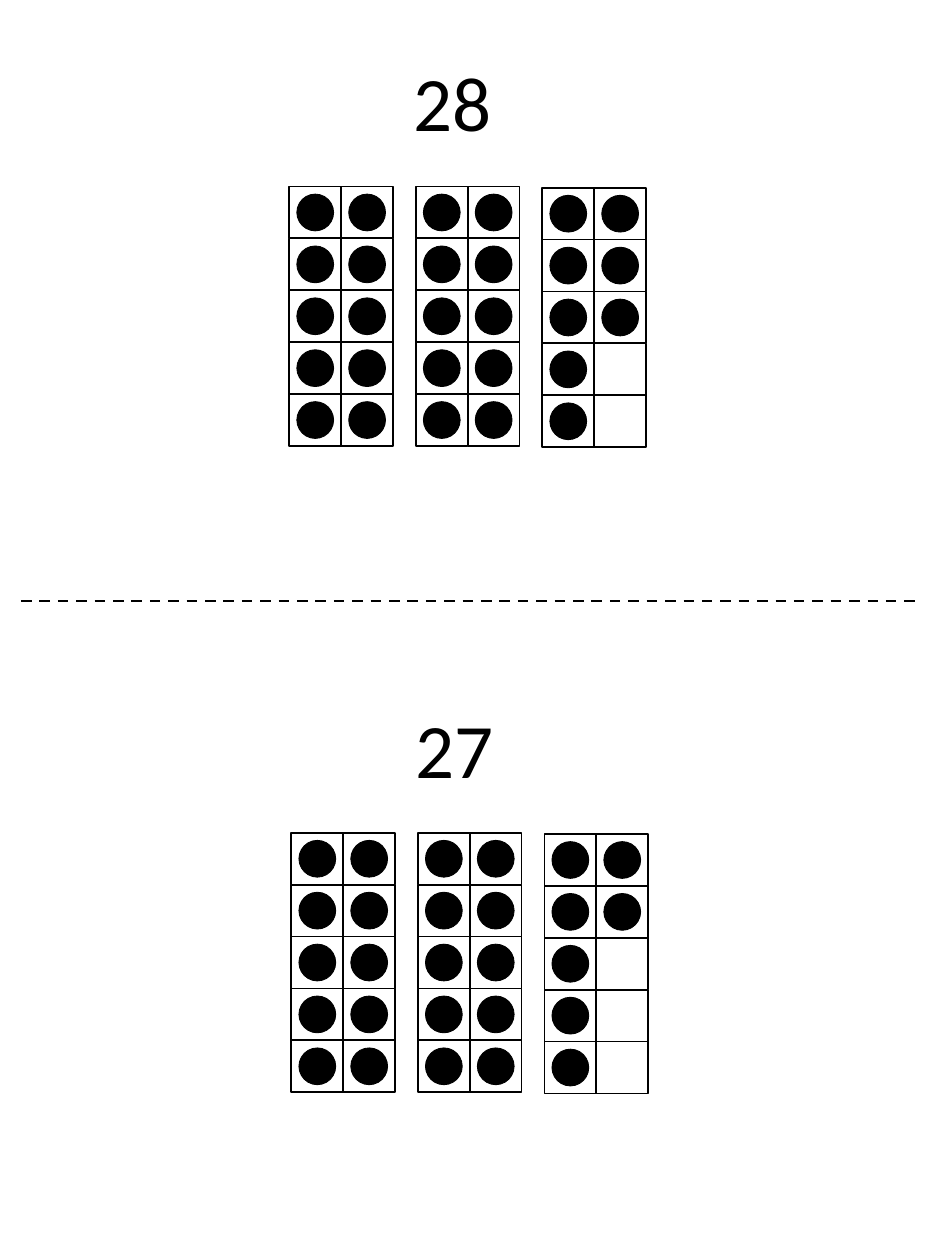
from lxml import etree
from pptx import Presentation
from pptx.dml.color import RGBColor
from pptx.enum.dml import MSO_LINE
from pptx.enum.shapes import MSO_CONNECTOR, MSO_SHAPE
from pptx.enum.text import MSO_ANCHOR, MSO_AUTO_SIZE, PP_ALIGN
from pptx.oxml.ns import qn
from pptx.util import Pt

# Content: each card shows a number and the ten frames that count it
CARDS = [
    {"number": 28, "number_at": (199.4, 21.6), "frames_at": (165.3, 106.6)},
    {"number": 27, "number_at": (200.2, 391), "frames_at": (166.5, 475.9)},
]
BLACK, WHITE = "000000", "FFFFFF"
ROWS, COLUMNS = 5, 2
FRAME_SIZE = ROWS * COLUMNS
CELL, DOT = 29.65, 21
FRAME_PITCH = 72.3
PARTIAL_DROP = 0.7  # the unfilled frame sits slightly lower
NUMBER_SIZE = (118.8, 72)


def color(hex_code):
    return RGBColor.from_string(hex_code)


def add_mark(kind, left, top, size, fill, line_width):
    mark = slide.shapes.add_shape(kind, Pt(left), Pt(top), Pt(size), Pt(size))
    mark.shadow.inherit = False
    mark.fill.solid()
    mark.fill.fore_color.rgb = color(fill)
    mark.line.color.rgb = color(BLACK)
    mark.line.width = Pt(line_width)


def write_number(box, number, position):
    box.left, box.top = map(Pt, position)
    box.width, box.height = map(Pt, NUMBER_SIZE)
    frame = box.text_frame
    frame.word_wrap = True
    frame.auto_size = MSO_AUTO_SIZE.NONE
    frame.vertical_anchor = MSO_ANCHOR.MIDDLE
    paragraph = frame.paragraphs[0]
    paragraph.alignment = PP_ALIGN.CENTER
    run = paragraph.add_run()
    run.text = str(number)
    run.font.name = "Calibri"
    run.font.size = Pt(44)
    run.font.color.rgb = color(BLACK)


def add_ten_frame(left, top, count):
    for row in range(ROWS):
        for column in range(COLUMNS):
            x, y = left + column * CELL, top + row * CELL
            add_mark(MSO_SHAPE.RECTANGLE, x, y, CELL, WHITE, 1)
            # Dots fill the left column first, then the right
            if column * ROWS + row < count:
                inset = (CELL - DOT) / 2
                add_mark(MSO_SHAPE.OVAL, x + inset, y + inset, DOT, BLACK, 0.5)


deck = Presentation()
deck.slide_width, deck.slide_height = Pt(540), Pt(720)
slide = deck.slides.add_slide(deck.slide_layouts[5])

# Cut line between the cards
cut_line = slide.shapes.add_connector(
    MSO_CONNECTOR.STRAIGHT, Pt(12), Pt(343.4), Pt(525), Pt(343.4))
cut_line.line.color.rgb = color(BLACK)
cut_line.line.width = Pt(1.5)
cut_line.line.dash_style = MSO_LINE.DASH
etree.SubElement(cut_line._element.spPr, qn("a:effectLst"))

# Cards: the first number is the slide title
for index, card in enumerate(CARDS):
    number_box = (slide.shapes.title if index == 0
                  else slide.shapes.add_textbox(0, 0, 0, 0))
    write_number(number_box, card["number"], card["number_at"])

    left, top = card["frames_at"]
    full, rest = divmod(card["number"], FRAME_SIZE)
    for position in range(full):
        add_ten_frame(left + position * FRAME_PITCH, top, FRAME_SIZE)
    add_ten_frame(left + full * FRAME_PITCH, top + PARTIAL_DROP, rest)

deck.save("out.pptx")
